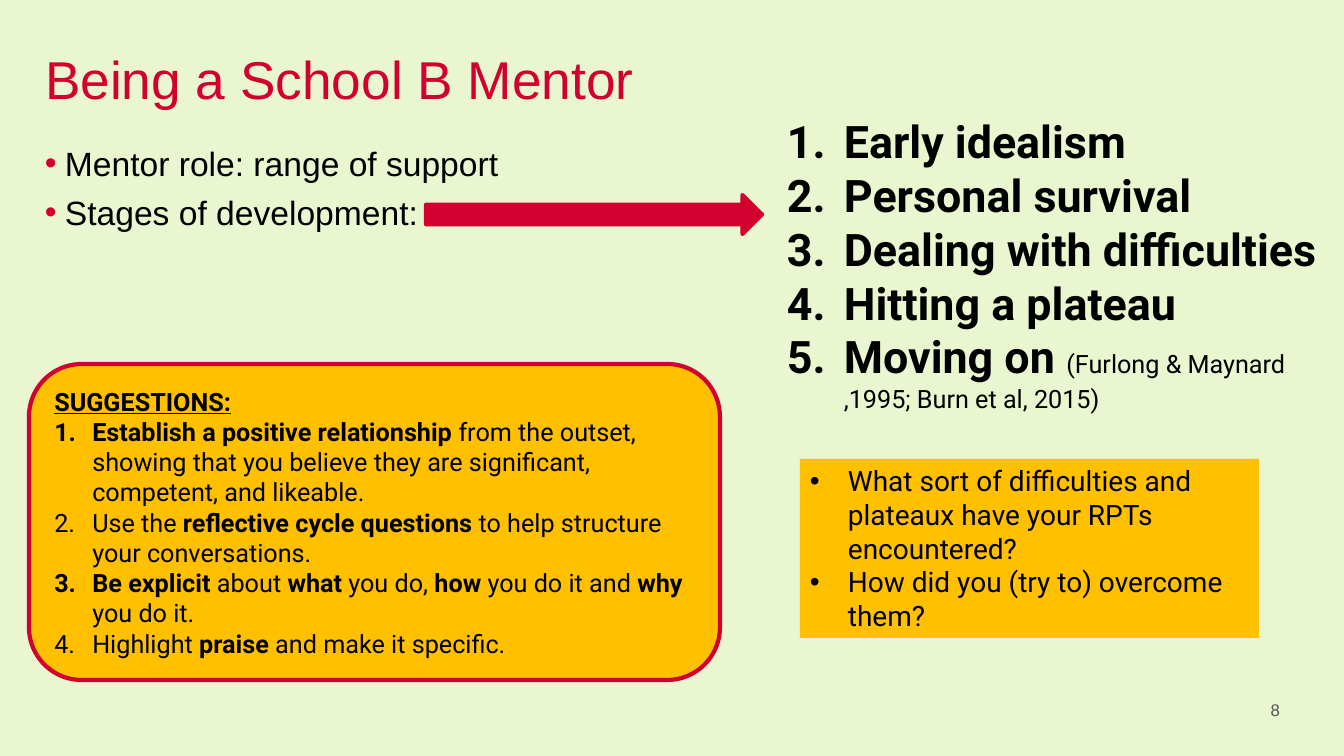
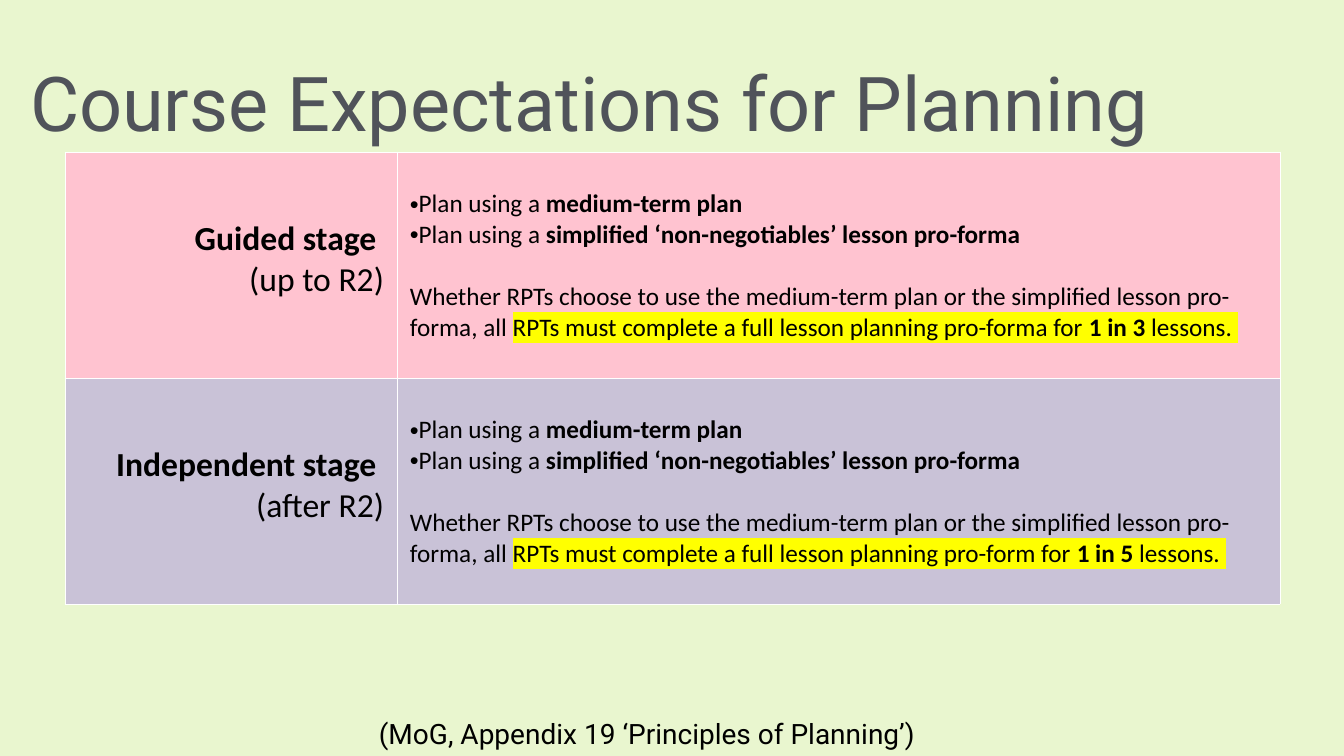
import pptx
import pptx.util
import pptx.dml.color
import pptx.enum.shapes
import pptx.enum.text
import pptx.oxml.ns
from lxml import etree

SLIDE_W, SLIDE_H = 1344, 756
EMU_PER_PX = 12192000 / SLIDE_W

COLORS = {
    "background": "E9F6CF", "red": "D2002E", "amber": "FFC000", "gray": "50535A",
    "black": "000000", "white": "FFFFFF", "pink": "FFC3D0", "lilac": "C9C2D7",
    "highlight": "FFFF00",
}
ALIGN = pptx.enum.text.PP_ALIGN
ANCHOR = pptx.enum.text.MSO_ANCHOR
SHAPE = pptx.enum.shapes.MSO_SHAPE

BOLD = {"bold": True}
PLAIN = {"bold": False}
MARKED = {"highlight": "highlight"}

# A paragraph is a list of runs; a run is a string or (text, style changes).
ROLES = [["Mentor role: range of support"], ["Stages of development:"]]
STAGES = [
    ["Early idealism"],
    ["Personal survival"],
    ["Dealing with difficulties"],
    ["Hitting a plateau"],
    ["Moving on ", ("(Furlong & Maynard ,1995; Burn et al, 2015)", {"bold": False, "size": 18})],
]
SUGGESTIONS_HEADING = [[("SUGGESTIONS:", {"bold": True, "underline": True})]]
SUGGESTIONS = [
    [("Establish a positive relationship ", BOLD),
     "from the outset, showing that you believe they are significant, competent, and likeable."],
    ["Use the ", ("reflective cycle questions ", BOLD), "to help structure your conversations."],
    [("Be explicit ", BOLD), "about ", ("what", BOLD), " you do, ", ("how", BOLD),
     " you do it and ", ("why", BOLD), " you do it."],
    ["Highlight ", ("praise", BOLD), " and make it specific."],
]
QUESTIONS = [
    ["What sort of difficulties and plateaux have your RPTs encountered?"],
    ["How did you (try to) overcome them?"],
]
PLAN_OPTIONS = [
    ["Plan using a ", ("medium-term plan", BOLD)],
    ["Plan using a ", ("simplified ‘non-negotiables’ lesson pro-forma", BOLD)],
]
PLANNING_STAGES = [
    ("Guided stage ", "(up to R2)", "pro-forma", "1 in 3", "pink"),
    ("Independent stage ", "(after R2)", "pro-form", "1 in 5", "lilac"),
]


def px(n):
    return pptx.util.Emu(round(n * EMU_PER_PX))


def rgb(name):
    return pptx.dml.color.RGBColor.from_string(COLORS[name])


def add_xml(parent, tag, **attrs):
    return etree.SubElement(parent, pptx.oxml.ns.qn(tag), attrs)


def add_color(parent, tag, name):
    add_xml(add_xml(parent, tag), "a:srgbClr", val=COLORS[name])


def add_bullet(p, bullet, indent, color=None):
    """Bullet is a character, or "1." for automatic numbers."""
    p_pr = p._p.get_or_add_pPr()
    p_pr.set("marL", str(px(indent)))
    p_pr.set("indent", str(-px(indent)))
    if color:
        add_color(p_pr, "a:buClr", color)
    if bullet == "1.":
        add_xml(p_pr, "a:buAutoNum", type="arabicPeriod")
    else:
        add_xml(p_pr, "a:buFont", typeface="Arial")
        add_xml(p_pr, "a:buChar", char=bullet)


def add_run(p, text, size, font, color="black", bold=False, underline=False, highlight=None):
    r = p.add_run()
    r.text = text
    r.font.size = pptx.util.Pt(size)
    r.font.bold = bold
    r.font.underline = underline
    r.font.color.rgb = rgb(color)
    if highlight:
        add_color(r._r.get_or_add_rPr(), "a:highlight", highlight)
    r.font.name = font


def write(tf, paragraphs, style, align=ALIGN.LEFT, bullet=None, indent=0,
          bullet_color=None, gap=0, before=0):
    """Append paragraphs: gap separates them, before sets off the first."""
    for i, runs in enumerate(paragraphs):
        is_first_in_box = not tf.paragraphs[0].runs
        p = tf.paragraphs[0] if is_first_in_box else tf.add_paragraph()
        p.alignment = align
        p.space_before = pptx.util.Pt(0 if is_first_in_box else gap if i else before)
        if bullet:
            add_bullet(p, bullet, indent, bullet_color)
        for run in runs:
            text, changes = (run, {}) if isinstance(run, str) else run
            add_run(p, text, **{**style, **changes})


def set_margins(box, left, top, right, bottom):
    box.margin_left, box.margin_top = px(left), px(top)
    box.margin_right, box.margin_bottom = px(right), px(bottom)


def add_textbox(s, x, y, w, h, margin=None):
    tf = s.shapes.add_textbox(px(x), px(y), px(w), px(h)).text_frame
    tf.word_wrap = True
    if margin is not None:
        set_margins(tf, *[margin] * 4)
    return tf


def add_block(s, kind, x, y, w, h, fill, line=None, anchor=ANCHOR.TOP):
    sp = s.shapes.add_shape(kind, px(x), px(y), px(w), px(h))
    sp.shadow.inherit = False
    sp.fill.solid()
    sp.fill.fore_color.rgb = rgb(fill)
    if line:
        sp.line.color.rgb = rgb(line)
        sp.line.width = pptx.util.Pt(3)
    else:
        sp.line.fill.background()
    sp.text_frame.vertical_anchor = anchor
    return sp.text_frame


def add_slide(prs, title, x, y, w, h, style, margin):
    s = prs.slides.add_slide(prs.slide_layouts[5])
    sp = s.shapes.title
    sp.left, sp.top, sp.width, sp.height = px(x), px(y), px(w), px(h)
    tf = sp.text_frame
    tf.auto_size = pptx.enum.text.MSO_AUTO_SIZE.NONE
    tf.vertical_anchor = ANCHOR.BOTTOM
    set_margins(tf, *margin)
    write(tf, [[title]], style)
    return s


def format_cell(cell, fill, top):
    set_margins(cell, 13, top, 13, 6)
    tc_pr = cell._tc.get_or_add_tcPr()
    for side in ("a:lnL", "a:lnR", "a:lnT", "a:lnB"):
        add_color(add_xml(tc_pr, side, w=str(pptx.util.Pt(0.5))), "a:solidFill", "white")
    cell.fill.solid()
    cell.fill.fore_color.rgb = rgb(fill)


def build_mentor_slide(prs):
    s = add_slide(prs, "Being a School B Mentor", 45, 18, 1217, 92,
                  {"size": 38, "font": "Arial", "color": "red"}, (0, 0, 0, 0))
    write(add_textbox(s, 45, 143, 507, 100, margin=0), ROLES, {"size": 24, "font": "Arial"},
          bullet="•", indent=20, bullet_color="red", gap=6)
    write(add_textbox(s, 777, 109, 567, 312), STAGES,
          {"size": 32, "font": "Roboto", "bold": True}, bullet="1.", indent=57)

    tf = add_block(s, SHAPE.ROUNDED_RECTANGLE, 29, 364, 691, 316, "amber", "red", ANCHOR.MIDDLE)
    style = {"size": 18, "font": "Roboto"}
    write(tf, SUGGESTIONS_HEADING, style)
    write(tf, SUGGESTIONS, style, bullet="1.", indent=38)

    add_block(s, SHAPE.RIGHT_ARROW, 426, 195, 336, 39, "red", "red")
    write(add_block(s, SHAPE.RECTANGLE, 800, 459, 459, 179, "amber"), QUESTIONS,
          {"size": 20, "font": "Roboto"}, bullet="•", indent=38)
    write(add_textbox(s, 1180, 700, 100, 28, margin=0), [["8"]],
          {"size": 12, "font": "Arial", "color": "gray"}, align=ALIGN.RIGHT)


def build_planning_slide(prs):
    s = add_slide(prs, "Course Expectations for Planning", 20, 49, 1159, 103,
                  {"size": 54, "font": "Roboto", "color": "gray"}, (10, 5, 10, 5))
    widths, row_h = (332, 883), 226
    rows = len(PLANNING_STAGES)
    table = s.shapes.add_table(rows, len(widths), px(65), px(152),
                               px(sum(widths)), px(rows * row_h)).table
    table.first_row = table.horz_banding = False
    for column, width in zip(table.columns, widths):
        column.width = px(width)

    heading = {"size": 24, "font": "Calibri"}
    body = {"size": 18, "font": "Calibri"}
    for i, (stage, period, form, ratio, fill) in enumerate(PLANNING_STAGES):
        table.rows[i].height = px(row_h)
        stage_cell, plan_cell = table.cell(i, 0), table.cell(i, 1)
        format_cell(stage_cell, fill, top=67)
        format_cell(plan_cell, fill, top=37)
        write(stage_cell.text_frame, [[(stage, BOLD)], [period]], heading, align=ALIGN.RIGHT)
        write(plan_cell.text_frame, PLAN_OPTIONS, body, bullet="•")
        rule = [
            "Whether RPTs choose to use the medium-term plan or the simplified lesson pro-forma, all ",
            (f"RPTs must complete a full lesson planning {form} for ", MARKED),
            (ratio, {**BOLD, **MARKED}),
            (" lessons. ", MARKED),
        ]
        write(plan_cell.text_frame, [rule], body, before=22)

    write(add_textbox(s, 369, 712, 691, 44), [["(MoG, Appendix 19 ‘Principles of Planning’)"]],
          {"size": 20, "font": "Roboto"})


def main():
    prs = pptx.Presentation()
    prs.slide_width, prs.slide_height = px(SLIDE_W), px(SLIDE_H)
    background = prs.slide_master.background.fill
    background.solid()
    background.fore_color.rgb = rgb("background")
    build_mentor_slide(prs)
    build_planning_slide(prs)
    prs.save("out.pptx")


if __name__ == "__main__":
    main()
